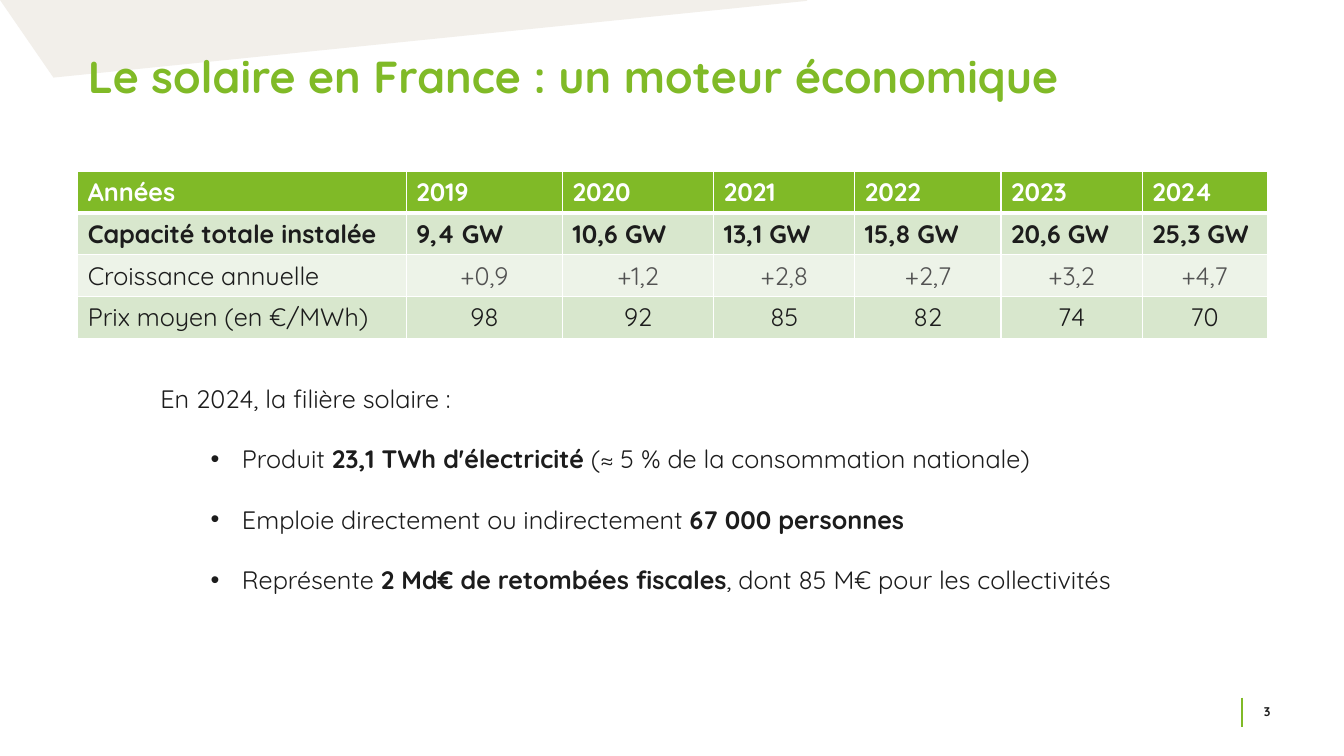
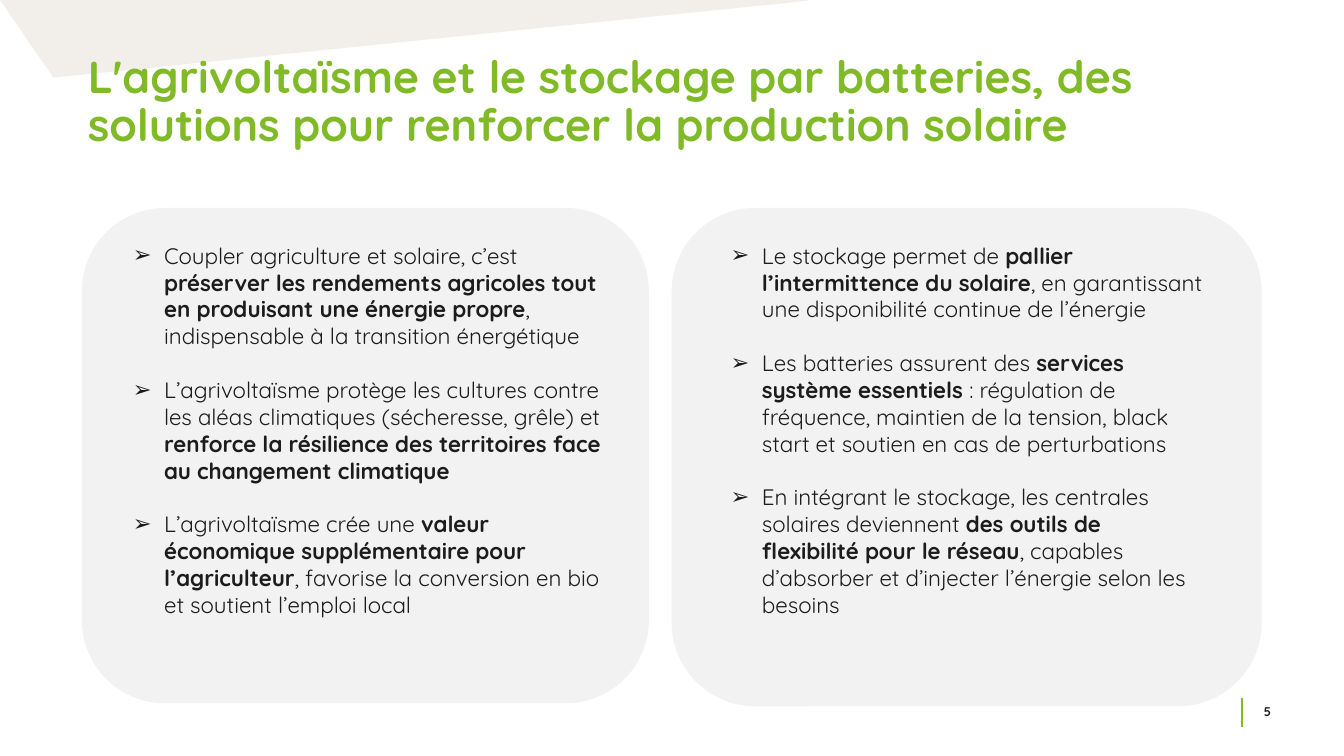
import pptx
import pptx.util
import pptx.dml.color
import pptx.enum.shapes
import pptx.enum.text
import pptx.oxml
import pptx.oxml.ns
from dataclasses import dataclass
from lxml import etree

WIDTH, HEIGHT = pptx.util.Inches(13.33), pptx.util.Inches(7.5)
ALIGN = pptx.enum.text.PP_ALIGN
ANCHOR = pptx.enum.text.MSO_ANCHOR


@dataclass(frozen=True)
class Theme:
    font: str = "Quicksand"
    green: str = "80BA27"
    ink: str = "1C1C1C"
    grey: str = "525252"
    white: str = "FFFFFF"
    sand: str = "F2EFEA"
    card: str = "F2F2F2"
    band_dark: str = "D8E7CD"
    band_light: str = "EDF3E8"
    title_size: float = 32
    body_size: float = 18
    card_size: float = 16
    number_size: float = 9
    line_height: float = 1.2


THEME = Theme()

YEARS = ["Années", "2019", "2020", "2021", "2022", "2023", "2024"]
CAPACITY = ["Capacité totale instalée", "9,4 GW", "10,6 GW", "13,1 GW",
            "15,8 GW", "20,6 GW", "25,3 GW"]
GROWTH = ["Croissance annuelle", "+0,9", "+1,2", "+2,8", "+2,7", "+3,2", "+4,7"]
PRICES = ["Prix moyen (en €/MWh)", "98", "92", "85", "82", "74", "70"]
YEAR_COLUMNS = [24.45, 11.63, 11.25, 10.5, 10.88, 10.5, 9.3]

# In each paragraph the runs alternate: regular, bold, regular
SECTOR_INTRO = ("En 2024, la filière solaire :",)
SECTOR_FACTS = [
    ("Produit ", "23,1 TWh d'électricité", " (≈ 5 % de la consommation nationale)"),
    ("Emploie directement ou indirectement ", "67 000 personnes"),
    ("Représente ", "2 Md€ de retombées fiscales",
     ", dont 85 M€ pour les collectivités"),
]
FARMING = [
    ("Coupler agriculture et solaire, c’est ",
     "préserver les rendements agricoles tout en produisant une énergie propre",
     ", indispensable à la transition énergétique"),
    ("L’agrivoltaïsme protège les cultures contre les aléas climatiques "
     "(sécheresse, grêle) et ",
     "renforce la résilience des territoires face au changement climatique"),
    ("L’agrivoltaïsme crée une ",
     "valeur économique supplémentaire pour l’agriculteur",
     ", favorise la conversion en bio et soutient l’emploi local"),
]
STORAGE = [
    ("Le stockage permet de ", "pallier l’intermittence du solaire",
     ", en garantissant une disponibilité continue de l’énergie"),
    ("Les batteries assurent des ", "services système essentiels",
     " : régulation de fréquence, maintien de la tension, black start "
     "et soutien en cas de perturbations"),
    ("En intégrant le stockage, les centrales solaires deviennent ",
     "des outils de flexibilité pour le réseau",
     ", capables d’absorber et d’injecter l’énergie selon les besoins"),
]


# Lengths, as percentages of the slide's width and height
def across(share):
    return round(WIDTH * share / 100)


def down(share):
    return round(HEIGHT * share / 100)


def area(left, top, width, height):
    return across(left), down(top), across(width), down(height)


def place(shape, box):
    shape.left, shape.top, shape.width, shape.height = box


def rgb(color):
    return pptx.dml.color.RGBColor.from_string(color)


def paint(target, color):
    target.fill.solid()
    target.fill.fore_color.rgb = rgb(color)


# Text
def add_run(paragraph, text, size, color=THEME.ink, bold=False):
    run = paragraph.add_run()
    run.text = text
    run.font.name = THEME.font
    run.font.size = pptx.util.Pt(size)
    run.font.bold = bold
    run.font.color.rgb = rgb(color)


def set_bullet(paragraph, mark, margin, hang):
    props = paragraph._p.get_or_add_pPr()
    props.set("marL", str(pptx.util.Inches(margin)))
    props.set("indent", str(-pptx.util.Inches(hang)))
    if mark:
        font = etree.SubElement(props, pptx.oxml.ns.qn("a:buFont"))
        font.set("typeface", "Arial")
        etree.SubElement(props, pptx.oxml.ns.qn("a:buChar")).set("char", mark)
    else:
        etree.SubElement(props, pptx.oxml.ns.qn("a:buNone"))


def prepare(frame, anchor=ANCHOR.TOP):
    frame.word_wrap = True
    frame.auto_size = pptx.enum.text.MSO_AUTO_SIZE.NONE
    frame.vertical_anchor = anchor


def fill_list(frame, entries, size):
    """Write (runs, level, mark, margin, hang) entries one blank line apart."""
    prepare(frame)
    for index, (runs, level, mark, margin, hang) in enumerate(entries):
        paragraph = frame.add_paragraph() if index else frame.paragraphs[0]
        paragraph.level = level
        set_bullet(paragraph, mark, margin, hang)
        paragraph.alignment = ALIGN.LEFT
        paragraph.line_spacing = 1.0
        gap = size * THEME.line_height if index else 0
        paragraph.space_before = pptx.util.Pt(gap)
        for position, text in enumerate(runs):
            add_run(paragraph, text, size, bold=position % 2 == 1)


# Parts that every slide shares
def decorate_master(prs, slide):
    """Build the corner and the footer rule, then move them to the master."""
    outline = slide.shapes.build_freeform(0, 0, scale=1.0)
    outline.add_line_segments(
        [(across(3.98), down(10.27)), (across(60), down(0.13)), (across(60.08), 0)])
    corner = outline.convert_to_shape()
    corner.shadow.inherit = False
    paint(corner, THEME.sand)
    corner.line.fill.background()

    rule = slide.shapes.add_connector(
        pptx.enum.shapes.MSO_CONNECTOR.STRAIGHT,
        across(92.4), down(92.27), across(92.4), down(96.13))
    rule.line.color.rgb = rgb(THEME.green)
    rule.line.width = pptx.util.Pt(1.5)
    etree.SubElement(rule.element.spPr, pptx.oxml.ns.qn("a:effectLst"))

    master_tree = prs.slide_master.shapes.element
    for offset, part in enumerate((corner, rule)):
        part.element.xpath(".//p:cNvPr")[0].set("id", str(100 + offset))
        master_tree.insert(2 + offset, part.element)


def set_title(slide, text, width, height):
    title = slide.shapes.title
    place(title, area(5.78, 6.53, width, height))
    prepare(title.text_frame)
    paragraph = title.text_frame.paragraphs[0]
    paragraph.alignment = ALIGN.LEFT
    paragraph.line_spacing = 0.9
    add_run(paragraph, text, THEME.title_size, THEME.green, True)


def add_number(slide, number):
    frame = slide.shapes.add_textbox(*area(93.3, 92.13, 3.45, 4)).text_frame
    prepare(frame, ANCHOR.MIDDLE)
    add_run(frame.paragraphs[0], number, THEME.number_size, bold=True)


# Table
def set_borders(cell, bottom):
    props = cell._tc.get_or_add_tcPr()
    sides = {"lnL": 1, "lnR": 1, "lnT": 1, "lnB": bottom}
    for index, (side, points) in enumerate(sides.items()):
        props.insert(index, pptx.oxml.parse_xml(
            f'<a:{side} {pptx.oxml.ns.nsdecls("a")} w="{pptx.util.Pt(points)}">'
            f'<a:solidFill><a:srgbClr val="{THEME.white}"/></a:solidFill>'
            f'</a:{side}>'))


def add_year_table(slide):
    # Texts, fill, label colour, value colour, bold, value alignment
    lines = [
        (YEARS, THEME.green, THEME.white, THEME.white, True, ALIGN.LEFT),
        (CAPACITY, THEME.band_dark, THEME.ink, THEME.ink, True, ALIGN.LEFT),
        (GROWTH, THEME.band_light, THEME.ink, THEME.grey, False, ALIGN.CENTER),
        (PRICES, THEME.band_dark, THEME.ink, THEME.ink, False, ALIGN.CENTER),
    ]
    row_share = 5.4
    table = slide.shapes.add_table(
        len(lines), len(YEARS),
        *area(5.78, 22.67, sum(YEAR_COLUMNS), row_share * len(lines))).table
    table.horz_banding = False
    for column, share in zip(table.columns, YEAR_COLUMNS):
        column.width = across(share)
    for row, (texts, fill, label, value, bold, align) in enumerate(lines):
        table.rows[row].height = down(row_share)
        for column, text in enumerate(texts):
            cell = table.cell(row, column)
            paint(cell, fill)
            set_borders(cell, bottom=1 if row else 3)
            paragraph = cell.text_frame.paragraphs[0]
            paragraph.alignment = align if column else ALIGN.LEFT
            add_run(paragraph, text, THEME.body_size,
                    value if column else label, bold)


# Cards
def add_card(slide, card_box, list_left, points):
    card = slide.shapes.add_shape(
        pptx.enum.shapes.MSO_SHAPE.ROUNDED_RECTANGLE, *area(*card_box))
    card.shadow.inherit = False
    paint(card, THEME.card)
    card.line.color.rgb = rgb(THEME.card)
    card.line.width = pptx.util.Pt(1)
    arguments = slide.shapes.add_textbox(*area(list_left, 31.33, 36.68, 55.2))
    fill_list(arguments.text_frame,
              [(runs, 0, "➢", 0.31, 0.31) for runs in points], THEME.card_size)


# Slides
def build_economy(slide):
    set_title(slide, "Le solaire en France : un moteur économique", 80.85, 9.73)
    sector = slide.placeholders[1]
    place(sector, area(11.18, 50, 75.3, 31.73))
    entries = [(SECTOR_INTRO, 0, None, 0, 0)]
    entries += [(runs, 1, "•", 0.81, 0.31) for runs in SECTOR_FACTS]
    fill_list(sector.text_frame, entries, THEME.body_size)
    add_number(slide, "3")
    add_year_table(slide)


def build_solutions(slide):
    set_title(slide, "L'agrivoltaïsme et le stockage par batteries, des solutions "
              "pour renforcer la production solaire", 88.35, 15.47)
    add_card(slide, (50.03, 27.6, 43.8, 65.73), 53.63, STORAGE)
    add_card(slide, (6.15, 27.6, 42.08, 65.33), 9.15, FARMING)
    add_number(slide, "5")


def main():
    prs = pptx.Presentation()
    prs.slide_width, prs.slide_height = WIDTH, HEIGHT
    title_and_content, title_only = prs.slide_layouts[1], prs.slide_layouts[5]
    economy = prs.slides.add_slide(title_and_content)
    decorate_master(prs, economy)
    build_economy(economy)
    build_solutions(prs.slides.add_slide(title_only))
    prs.save("out.pptx")


if __name__ == "__main__":
    main()
